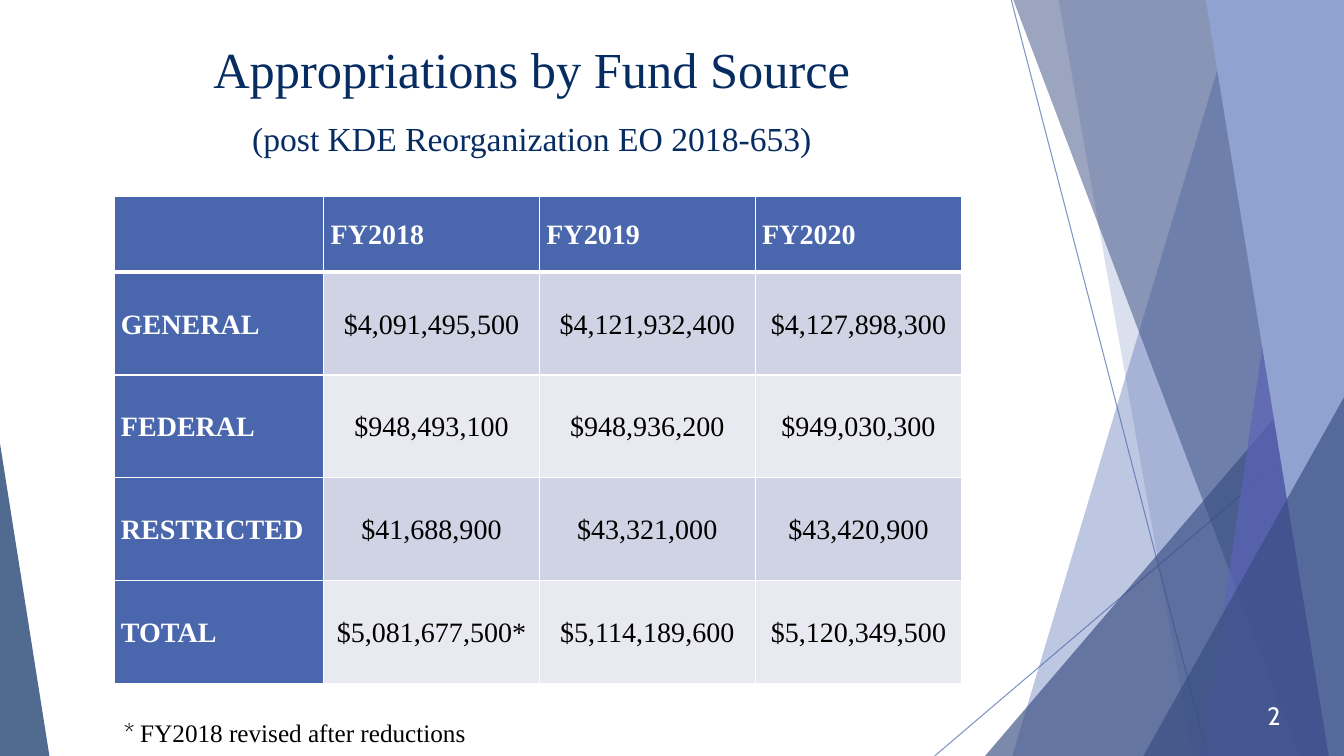
from lxml import etree
from pptx import Presentation
from pptx import util as u
from pptx.dml.color import RGBColor
from pptx.enum import shapes, text
from pptx.oxml import ns

WIDTH, HEIGHT = 13.33, 7.5
SERIF, SANS = "Times New Roman", "Cabin"
NAVY, BLUE, WHITE, BLACK = "072C62", "4A66AC", "FFFFFF", "000000"
BANDS = ["D0D3E3", "E9EAF1"]

HEADING = [("Appropriations by Fund Source", 36), ("(post KDE Reorganization EO 2018-653)", 24)]
FUNDS = [
    ("", "FY2018", "FY2019", "FY2020"),
    ("GENERAL", "$4,091,495,500", "$4,121,932,400", "$4,127,898,300"),
    ("FEDERAL", "$948,493,100", "$948,936,200", "$949,030,300"),
    ("RESTRICTED", "$41,688,900", "$43,321,000", "$43,420,900"),
    ("TOTAL", "$5,081,677,500*", "$5,114,189,600", "$5,120,349,500"),
]
COLUMNS = [2.08, 2.14, 2.14, 2.05]
ROWS = [0.75] + [1.02] * 4
NOTE = [("* ", SANS), ("FY2018 revised after reductions", SERIF)]

RAYS = [((10.03, 0), (11.98, HEIGHT)), ((WIDTH, 4.04), (9.27, HEIGHT))]
# kind, geometry, colour, opacity
FACETS = [
    ("band", (12.28, 10.04), BLUE, 36),
    ("band", (10.5, 11.83), BLUE, 20),
    ("peak", (9.77, 3.34, WIDTH, 1), "384C81", 66),
    ("band", (10.05, 12.89), "384C81", 50),
    ("band", (13.03, 11.92), "5C64B7", 70),
    ("band", (11.96, 13.18), "90A2CF", 100),
    ("peak", (11.34, 3.94, WIDTH, 1), "384C81", 66),
    ("peak", (0, 4.4, 0.49, 0), NAVY, 70),
]


def rgb(value):
    return RGBColor.from_string(value)


def fade(fill, opacity):
    for color in fill._xPr.iter(ns.qn("a:srgbClr")):
        etree.SubElement(color, ns.qn("a:alpha")).set("val", str(opacity * 1000))


def style(span, size, color, face=SERIF, bold=False):
    span.font.size, span.font.name, span.font.bold = u.Pt(size), face, bold
    span.font.color.rgb = rgb(color)


def add_ray(page, start, end):
    ray = page.shapes.add_connector(
        shapes.MSO_CONNECTOR.STRAIGHT, *[u.Inches(n) for n in start + end])
    ray.line.width = u.Pt(0.75)
    ray.line.color.rgb = rgb(BLUE)
    fade(ray.line.fill, 70)
    etree.SubElement(ray._element.spPr, ns.qn("a:effectLst"))


def add_facet(page, kind, geometry, color, opacity):
    if kind == "band":
        top, bottom = geometry
        corners = [(WIDTH, 0), (WIDTH, HEIGHT), (bottom, HEIGHT)]
        outline = page.shapes.build_freeform(u.Inches(top), 0)
        outline.add_line_segments([(u.Inches(x), u.Inches(y)) for x, y in corners])
        facet = outline.convert_to_shape()
    else:
        left, top, right, apex = geometry
        box = [u.Inches(n) for n in (left, top, right - left, HEIGHT - top)]
        facet = page.shapes.add_shape(shapes.MSO_SHAPE.ISOSCELES_TRIANGLE, *box)
        facet.adjustments[0] = apex
    facet.shadow.inherit = False
    facet.line.fill.background()
    facet.fill.solid()
    facet.fill.fore_color.rgb = rgb(color)
    fade(facet.fill, opacity)


def add_title(page):
    title = page.shapes.title
    title.left, title.top, title.width, title.height = [
        u.Inches(n) for n in (0, 0.28, 10.55, 1.01)]
    frame = title.text_frame
    frame.text = "\n".join(line for line, size in HEADING)
    frame.auto_size = text.MSO_AUTO_SIZE.NONE
    frame.vertical_anchor = text.MSO_ANCHOR.TOP
    frame.margin_top = u.Inches(0.1)
    for para, (line, size) in zip(frame.paragraphs, HEADING):
        para.alignment = text.PP_ALIGN.CENTER
        para.space_before = u.Pt(0)
        style(para.runs[0], size, NAVY)
    frame.paragraphs[1].space_before = u.Pt(14)


def add_borders(cell, header):
    props = cell._tc.get_or_add_tcPr()
    for index, side in enumerate(("lnL", "lnR", "lnT", "lnB")):
        edge = etree.Element(ns.qn(f"a:{side}"))
        edge.set("w", str(u.Pt(3 if header and side == "lnB" else 1)))
        solid = etree.SubElement(edge, ns.qn("a:solidFill"))
        etree.SubElement(solid, ns.qn("a:srgbClr")).set("val", WHITE)
        props.insert(index, edge)


def add_funds(page):
    table = page.shapes.add_table(
        len(ROWS), len(COLUMNS), u.Inches(1.13), u.Inches(1.95),
        u.Inches(sum(COLUMNS)), u.Inches(sum(ROWS))).table
    for column, width in zip(table.columns, COLUMNS):
        column.width = u.Inches(width)
    for r, (row, height) in enumerate(zip(table.rows, ROWS)):
        row.height = u.Inches(height)
        for c, cell in enumerate(row.cells):
            label = r == 0 or c == 0
            cell.fill.solid()
            cell.fill.fore_color.rgb = rgb(BLUE if label else BANDS[(r - 1) % 2])
            cell.margin_left = cell.margin_right = u.Inches(0.07)
            cell.margin_top = cell.margin_bottom = 0
            cell.vertical_anchor = text.MSO_ANCHOR.MIDDLE
            add_borders(cell, r == 0)
            cell.text = FUNDS[r][c]
            para = cell.text_frame.paragraphs[0]
            para.line_spacing = 1.07
            para.alignment = text.PP_ALIGN.LEFT if label else text.PP_ALIGN.CENTER
            for span in para.runs:
                style(span, 20, WHITE if label else BLACK, bold=label)


def add_text(page, box, spans, color, align, anchor):
    frame = page.shapes.add_textbox(*[u.Inches(n) for n in box]).text_frame
    frame.word_wrap = True
    frame.vertical_anchor = anchor
    para = frame.paragraphs[0]
    para.alignment = align
    for words, face in spans:
        span = para.add_run()
        span.text = words
        style(span, 18, color, face)


def main():
    """Build the fund source slide and save it."""
    deck = Presentation()
    deck.slide_width, deck.slide_height = u.Inches(WIDTH), u.Inches(HEIGHT)
    page = deck.slides.add_slide(deck.slide_layouts[5])
    for start, end in RAYS:
        add_ray(page, start, end)
    for facet in FACETS:
        add_facet(page, *facet)
    add_title(page)
    add_funds(page)
    add_text(page, (12.05, 6.9, 0.75, 0.4), [("2", SANS)], WHITE,
             text.PP_ALIGN.RIGHT, text.MSO_ANCHOR.MIDDLE)
    add_text(page, (1.13, 7.07, sum(COLUMNS), 0.4), NOTE, BLACK,
             text.PP_ALIGN.LEFT, text.MSO_ANCHOR.TOP)
    deck.save("out.pptx")


if __name__ == "__main__":
    main()
